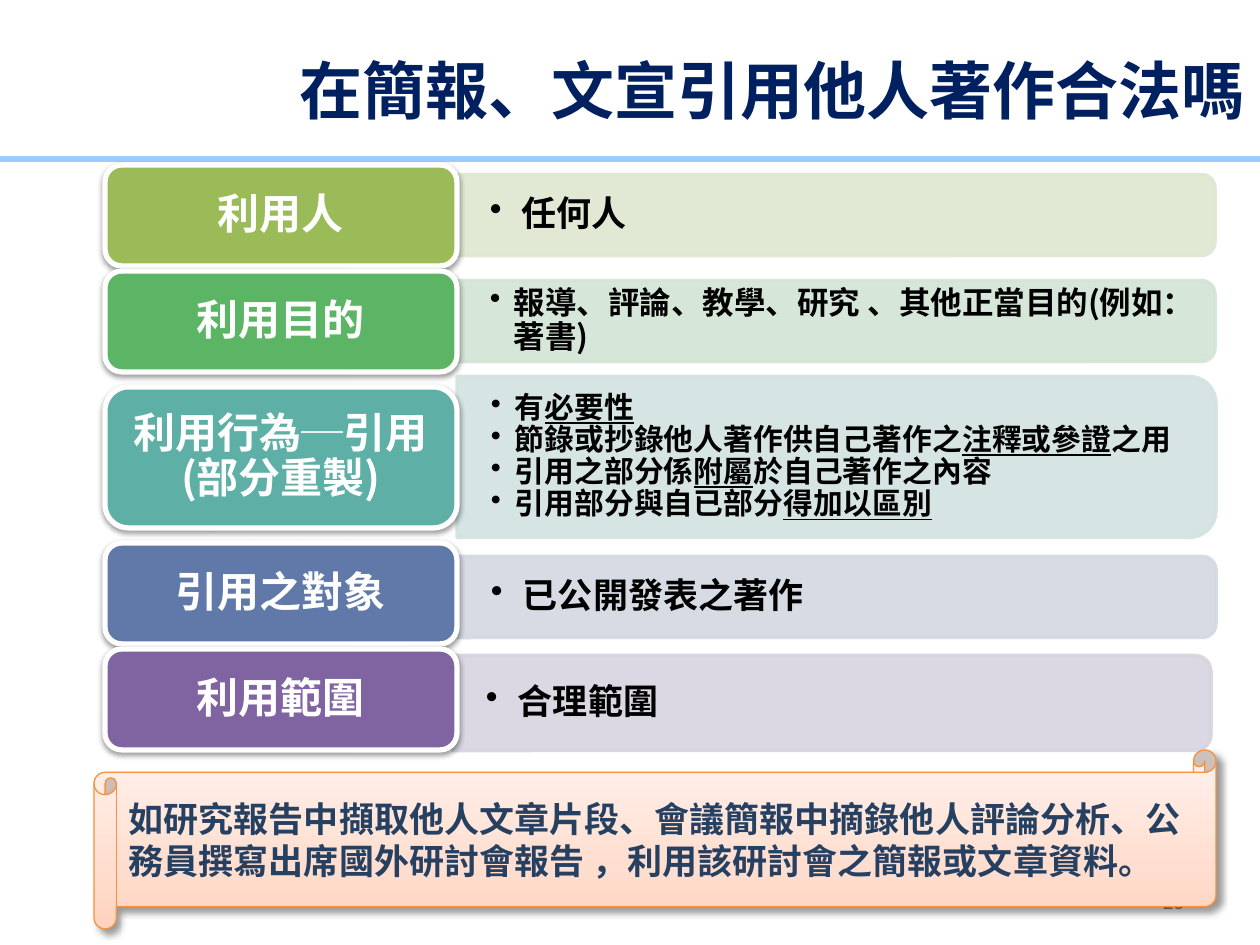
"""Build the slide on quoting other people's works in presentations."""
from lxml import etree
from pptx import Presentation
from pptx import util as u
from pptx.dml.color import RGBColor
from pptx.enum import shapes, text
from pptx.oxml.ns import qn

FONT = "Noto Sans CJK SC"
NAVY = RGBColor(0x00, 0x20, 0x60)
SKY = RGBColor(0x99, 0xCC, 0xFF)
GREY = RGBColor(0x8C, 0x8C, 0x8C)
BLACK = RGBColor(0, 0, 0)
WHITE = RGBColor(0xFF, 0xFF, 0xFF)
ORANGE = RGBColor(0xF6, 0x92, 0x40)
SLATE = RGBColor(0x25, 0x40, 0x61)
SCROLL_STOPS = [(0, RGBColor(0xFF, 0xD2, 0xBD)), (35, RGBColor(0xFF, 0xDE, 0xD0)),
                (100, RGBColor(0xFF, 0xF2, 0xED))]

TITLE = "在簡報、文宣引用他人著作合法嗎"
EXAMPLE = ("如研究報告中擷取他人文章片段、會議簡報中摘錄他人評論分析、"
           "公務員撰寫出席國外研討會報告 ，利用該研討會之簡報或文章資料。")

# Each bullet alternates plain and underlined runs.
ROWS = [
    dict(label="利用人", color=RGBColor(0x9B, 0xBB, 0x59), tint=RGBColor(0xDE, 0xE7, 0xD1),
         top=165, height=101, panel=(456, 215, 81), size=20, indent=32,
         bullets=[["任何人"]]),
    dict(label="利用目的", color=RGBColor(0x5C, 0xB5, 0x65), tint=RGBColor(0xD2, 0xE5, 0xD5),
         top=271, height=101, panel=(456, 321, 81), size=18, indent=24,
         bullets=[["報導、評論、教學、研究 、其他正當目的(例如：著書)"]]),
    dict(label="利用行為─引用(部分重製)", color=RGBColor(0x5E, 0xAF, 0xA6),
         tint=RGBColor(0xD2, 0xE3, 0xE2),
         top=387, height=141, panel=(457, 457, 161), size=17, indent=24,
         bullets=[["有", "必要性"],
                  ["節錄或抄錄他人著作供自己著作之", "注釋或參證", "之用"],
                  ["引用之部分係", "附屬", "於自己著作之內容"],
                  ["引用部分與自已部分", "得加以區別"]]),
    dict(label="引用之對象", color=RGBColor(0x61, 0x79, 0xA8), tint=RGBColor(0xD3, 0xD8, 0xE2),
         top=543, height=101, panel=(457, 597, 81), size=20, indent=32,
         bullets=[["已公開發表之著作"]]),
    dict(label="利用範圍", color=RGBColor(0x80, 0x64, 0xA2), tint=RGBColor(0xD8, 0xD3, 0xE0),
         top=649, height=101, panel=(452, 703, 95), size=20, indent=32,
         bullets=[["合理範圍"]]),
]
LABEL_LEFT, LABEL_WIDTH, PANEL_WIDTH = 105, 352, 759


def px(length):
    return u.Emu(round(length * 914400 / 126))


def box(*lengths):
    return [px(length) for length in lengths]


def add_shape(slide, kind, bounds, fill=None, line=None, width=0):
    shape = slide.shapes.add_shape(kind, *box(*bounds))
    shape.shadow.inherit = False
    if fill is not None:
        shape.fill.solid()
        shape.fill.fore_color.rgb = fill
    if line is None:
        shape.line.fill.background()
    else:
        shape.line.color.rgb = line
        shape.line.width = u.Pt(width)
    return shape


def add_text_box(slide, bounds, margins=(13, 6)):
    frame = slide.shapes.add_textbox(*box(*bounds)).text_frame
    frame.word_wrap = True
    frame.vertical_anchor = text.MSO_ANCHOR.MIDDLE
    frame.margin_left = frame.margin_right = px(margins[0])
    frame.margin_top = frame.margin_bottom = px(margins[1])
    return frame


def style(paragraph, size, color, align, bold=True, name=FONT):
    paragraph.alignment = align
    font = paragraph.font
    font.name, font.size, font.bold = name, u.Pt(size), bold
    font.color.rgb = color


def add_alpha(parent, percent):
    for color in parent.iter(qn("a:srgbClr")):
        etree.SubElement(color, qn("a:alpha"), val=str(percent * 1000))


def add_shadow(shape, percent, blur, distance, angle):
    effects = shape._element.spPr.find(qn("a:effectLst"))
    shadow = etree.SubElement(effects, qn("a:outerShdw"), blurRad=str(u.Pt(blur)),
                              dist=str(u.Pt(distance)), dir=str(angle * 60000),
                              algn="ctr", rotWithShape="0")
    etree.SubElement(shadow, qn("a:srgbClr"), val=str(BLACK))
    add_alpha(shadow, percent)


def set_gradient(shape, stops, angle):
    shape.fill.gradient()
    gradient = shape._element.spPr.find(qn("a:gradFill"))
    for child in list(gradient):
        gradient.remove(child)
    stop_list = etree.SubElement(gradient, qn("a:gsLst"))
    for position, color in stops:
        stop = etree.SubElement(stop_list, qn("a:gs"), pos=str(position * 1000))
        etree.SubElement(stop, qn("a:srgbClr"), val=str(color))
    etree.SubElement(gradient, qn("a:lin"), ang=str(angle * 60000), scaled="1")


def add_bullet(paragraph, indent):
    properties = paragraph._p.get_or_add_pPr()
    properties.set("marL", str(px(indent)))
    properties.set("indent", str(-px(indent)))
    etree.SubElement(properties, qn("a:buChar"), char="•")


def add_panel(slide, row):
    left, middle, height = row["panel"]
    center = left + PANEL_WIDTH / 2
    panel = add_shape(slide, shapes.MSO_SHAPE.ROUND_2_SAME_RECTANGLE,
                      (center - height / 2, middle - PANEL_WIDTH / 2, height, PANEL_WIDTH),
                      row["tint"], row["tint"], 2)
    panel.rotation = 90
    add_alpha(panel._element.spPr, 90)
    frame = add_text_box(slide, (left, middle - height / 2, PANEL_WIDTH - 4, height), (34, 18))
    for index, runs in enumerate(row["bullets"]):
        paragraph = frame.add_paragraph() if index else frame.paragraphs[0]
        paragraph.line_spacing = 0.9
        add_bullet(paragraph, row["indent"])
        style(paragraph, row["size"], BLACK, text.PP_ALIGN.LEFT)
        for position, words in enumerate(runs):
            run = paragraph.add_run()
            run.text = words
            if position % 2:
                run.font.underline = True


def add_label(slide, row):
    label = add_shape(slide, shapes.MSO_SHAPE.ROUNDED_RECTANGLE,
                      (LABEL_LEFT, row["top"], LABEL_WIDTH, row["height"]),
                      row["color"], WHITE, 3)
    add_shadow(label, 38, 3.1, 1.6, 90)
    label.text_frame.text = row["label"]
    paragraph = label.text_frame.paragraphs[0]
    paragraph.line_spacing = 0.9
    style(paragraph, 24, WHITE, text.PP_ALIGN.CENTER)


def main():
    presentation = Presentation()
    presentation.slide_width, presentation.slide_height = box(1260, 945)
    slide = presentation.slides.add_slide(presentation.slide_layouts[5])

    title = slide.shapes.title
    title.left, title.top, title.width, title.height = box(280, 45, 985, 121)
    title.text_frame.text = TITLE
    title.text_frame.vertical_anchor = text.MSO_ANCHOR.TOP
    style(title.text_frame.paragraphs[0], 36, NAVY, text.PP_ALIGN.CENTER)

    add_shape(slide, shapes.MSO_SHAPE.RECTANGLE, (-5, 156, 1268, 6), SKY)
    number = add_text_box(slide, (903, 876, 294, 50)).paragraphs[0]
    number.text = "26"
    style(number, 12, GREY, text.PP_ALIGN.RIGHT, False, "Calibri")

    for row in ROWS:
        add_panel(slide, row)
        add_label(slide, row)

    scroll = add_shape(slide, shapes.MSO_SHAPE.HORIZONTAL_SCROLL, (94, 750, 1122, 179),
                       line=ORANGE, width=0.75)
    set_gradient(scroll, SCROLL_STOPS, 270)
    add_shadow(scroll, 40, 4, 3, 45)
    scroll.text_frame.text = EXAMPLE
    style(scroll.text_frame.paragraphs[0], 20, SLATE, text.PP_ALIGN.LEFT)

    presentation.save("out.pptx")


if __name__ == "__main__":
    main()
